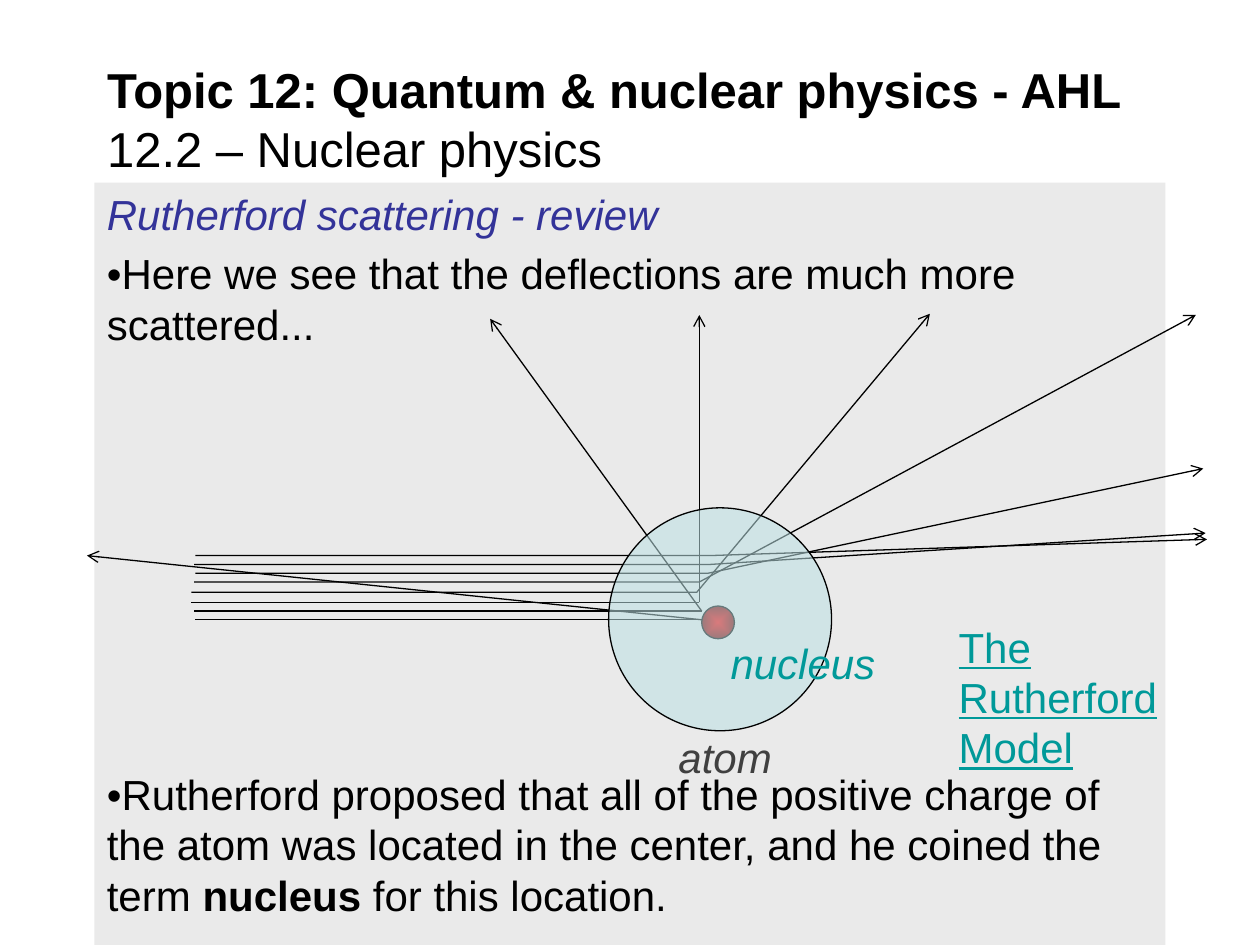
from pptx import Presentation
from pptx.dml.color import RGBColor
from pptx.enum.shapes import MSO_CONNECTOR, MSO_SHAPE
from pptx.enum.text import MSO_ANCHOR, MSO_AUTO_SIZE, PP_ALIGN
from pptx.oxml.ns import qn
from pptx.util import Pt
from lxml.etree import SubElement

FONT = "Arial"
BLACK = "000000"
TITLE = ("Topic 12: Quantum & nuclear physics - AHL", "12.2 – Nuclear physics")
TITLE_BOX = (54, 32.4, 612, 70.6)
PANEL_BOX = (54, 104.4, 612, 435.6)
PANEL_TEXT = [
    (0, "333399", True, [("Rutherford scattering - review", False)]),
    (4.8, BLACK, False, [("•Here we see that the deflections are much more scattered...", False)]),
    (240, BLACK, False, [
        ("•Rutherford proposed that all of the positive charge of the atom was "
         "located in the center, and he coined the term ", False),
        ("nucleus", True),
        (" for this location.", False),
    ]),
]
BENT_RAYS = [
    [(111.6, 317.5), (405.4, 317.5), (689.8, 308.2)],
    [(110.9, 322.6), (404.6, 322.6), (689, 304.6)],
    [(111.6, 327.6), (404.6, 327.6), (687.6, 267.8)],
    [(110.9, 332.6), (399.6, 332.6), (683.3, 180)],
    [(109.4, 338.4), (398.2, 338.4), (531.4, 179.3)],
]
SPLIT_RAYS = [
    [(109.4, 344.2), (399.6, 344.2), (399.6, 180)],
    [(110.9, 349.2), (401, 349.2), (280.1, 182.2)],
    [(111.6, 354.2), (401.4, 354.2), (49.7, 317.5)],
]
NUCLEUS_BOX = (401, 346.3, 18.7, 18.7)
ATOM_BOX = (347.8, 290.2, 127.4, 127.4)
ATOM_LABEL = ("atom", (352.1, 414.7, 124.6, 36.7), "404040", True, False, PP_ALIGN.CENTER, True)
FRONT_LABELS = [
    ("The Rutherford Model", (540.7, 351.4, 139.7, 94.3), "009999", False, True, PP_ALIGN.LEFT, True),
    ("nucleus", (410.4, 360.7, 97.9, 36.7), "009999", True, False, PP_ALIGN.LEFT, False),
]


def color(value):
    return RGBColor.from_string(value)


def points(values):
    return [Pt(value) for value in values]


def style_font(font, value, size=24, italic=False):
    font.name = FONT
    font.size = Pt(size)
    font.italic = italic
    font.color.rgb = color(value)


def style_line(shape, arrow=False):
    shape.line.color.rgb = color(BLACK)
    shape.line.width = Pt(0.75)
    if arrow:
        SubElement(shape.line._get_or_add_ln(), qn("a:tailEnd"), type="arrow")


def add_title(slide):
    title = slide.shapes.title
    title.left, title.top, title.width, title.height = points(TITLE_BOX)
    frame = title.text_frame
    frame.auto_size = MSO_AUTO_SIZE.NONE
    frame.vertical_anchor = MSO_ANCHOR.MIDDLE
    paragraph = frame.paragraphs[0]
    paragraph.alignment = PP_ALIGN.LEFT
    style_font(paragraph.font, BLACK, 28)
    topic, section = TITLE
    run = paragraph.add_run()
    run.text = topic
    run.font.bold = True
    paragraph.add_line_break()
    paragraph.add_run().text = section


def add_panel(slide):
    panel = slide.shapes.add_shape(MSO_SHAPE.RECTANGLE, *points(PANEL_BOX))
    panel.shadow.inherit = False
    panel.fill.solid()
    panel.fill.fore_color.rgb = color("EAEAEA")
    panel.line.fill.background()
    frame = panel.text_frame
    frame.word_wrap = True
    frame.vertical_anchor = MSO_ANCHOR.TOP
    for index, (gap, value, italic, runs) in enumerate(PANEL_TEXT):
        paragraph = frame.add_paragraph() if index else frame.paragraphs[0]
        paragraph.alignment = PP_ALIGN.LEFT
        paragraph.space_before = Pt(gap)
        style_font(paragraph.font, value, italic=italic)
        for text, bold in runs:
            run = paragraph.add_run()
            run.text = text
            run.font.bold = bold


def add_circle(slide, box):
    circle = slide.shapes.add_shape(MSO_SHAPE.OVAL, *points(box))
    circle.shadow.inherit = False
    style_line(circle)
    return circle


def add_nucleus(slide):
    fill = add_circle(slide, NUCLEUS_BOX).fill
    fill.gradient()
    for stop, position, value in zip(fill.gradient_stops, (0, 1), ("FF0000", "760000")):
        stop.position = position
        stop.color.rgb = color(value)
    gradient = fill._xPr.find(qn("a:gradFill"))
    gradient.remove(gradient.find(qn("a:lin")))
    shade = SubElement(gradient, qn("a:path"), path="shape")
    SubElement(shade, qn("a:fillToRect"), l="50000", t="50000", r="50000", b="50000")


def add_atom(slide):
    fill = add_circle(slide, ATOM_BOX).fill
    fill.solid()
    fill.fore_color.rgb = color("BBE0E3")
    SubElement(fill._xPr.find(qn("a:solidFill"))[0], qn("a:alpha"), val="55000")


def add_bent_ray(slide, vertices):
    start, *rest = [points(vertex) for vertex in vertices]
    builder = slide.shapes.build_freeform(*start)
    builder.add_line_segments(rest, close=False)
    ray = builder.convert_to_shape()
    ray.shadow.inherit = False
    ray.fill.background()
    style_line(ray, arrow=True)


def add_split_ray(slide, vertices):
    source, turn, target = vertices
    for start, end, arrow in ((source, turn, False), (turn, target, True)):
        line = slide.shapes.add_connector(MSO_CONNECTOR.STRAIGHT, *points(start + end))
        style_line(line, arrow)
        SubElement(line._element.spPr, qn("a:effectLst"))


def add_label(slide, text, box, value, italic, underline, alignment, wrap):
    frame = slide.shapes.add_textbox(*points(box)).text_frame
    frame.word_wrap = wrap
    frame.auto_size = MSO_AUTO_SIZE.SHAPE_TO_FIT_TEXT
    paragraph = frame.paragraphs[0]
    paragraph.text = text
    paragraph.alignment = alignment
    style_font(paragraph.font, value, italic=italic)
    paragraph.font.underline = underline


def main():
    """Build the Rutherford scattering slide."""
    presentation = Presentation()
    presentation.slide_width, presentation.slide_height = Pt(720), Pt(540)
    slide = presentation.slides.add_slide(presentation.slide_layouts[5])
    add_title(slide)
    add_panel(slide)
    add_nucleus(slide)
    for ray in BENT_RAYS:
        add_bent_ray(slide, ray)
    for ray in SPLIT_RAYS:
        add_split_ray(slide, ray)
    add_label(slide, *ATOM_LABEL)
    add_atom(slide)
    for label in FRONT_LABELS:
        add_label(slide, *label)
    presentation.save("out.pptx")


if __name__ == "__main__":
    main()
